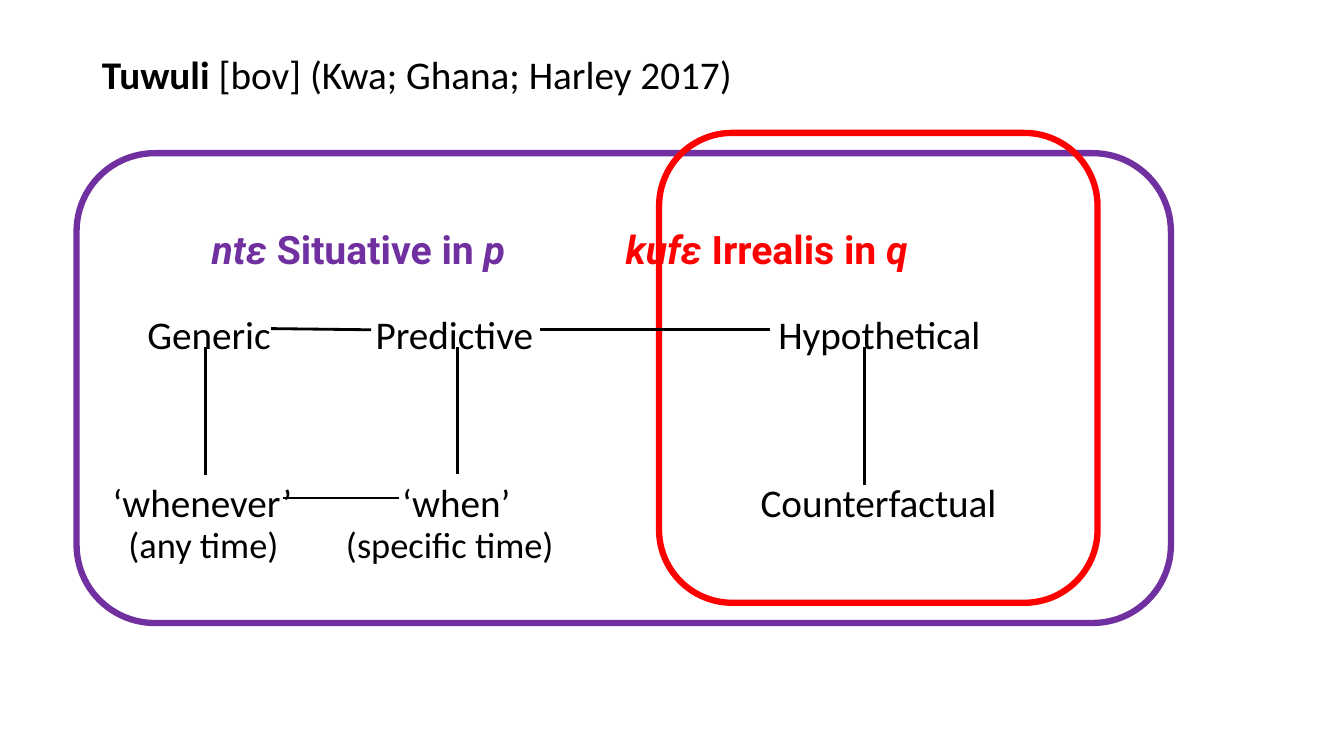
"""Build the slide mapping Tuwuli conditional markers onto clause types."""
from lxml import etree
from pptx import Presentation
from pptx import util as u
from pptx.dml.color import RGBColor
from pptx.enum import shapes, text
from pptx.oxml.ns import qn

COLORS = {"ink": "000000", "situative": "7030A0", "irrealis": "FF0000"}


class SemanticMap:
    """Hold the style and the slide that the map is drawn on."""

    line_width = u.Pt(2)
    frame_width = u.Pt(4.5)
    label_height = 1.3

    def __init__(self, slide):
        """Keep the current slide."""
        self.slide = slide

    def color(self, name):
        """Return a named colour."""
        return RGBColor.from_string(COLORS[name])

    def label(self, runs, left, middle, width, centred=True, color="ink", name="Calibri", size=28):
        """Write one line of (text, format) runs around a middle height."""
        top = middle - self.label_height / 2
        box = self.slide.shapes.add_textbox(
            u.Cm(left), u.Cm(top), u.Cm(width), u.Cm(self.label_height))
        frame_format = {"word_wrap": True, "vertical_anchor": text.MSO_ANCHOR.MIDDLE,
                        "margin_left": 0, "margin_right": 0, "margin_top": 0, "margin_bottom": 0}
        for key, value in frame_format.items():
            setattr(box.text_frame, key, value)
        paragraph = box.text_frame.paragraphs[0]
        paragraph.alignment = text.PP_ALIGN.CENTER if centred else text.PP_ALIGN.LEFT
        for words, run_format in runs:
            run = paragraph.add_run()
            run.text = words
            run.font.color.rgb = self.color(color)
            for key, value in {"name": name, "size": u.Pt(size), **run_format}.items():
                setattr(run.font, key, value)

    def node(self, words, center, middle, size=28):
        """Write a clause type centred on a point."""
        self.label([(words, {})], center - 4, middle, 8, size=size)

    def marker(self, form, meaning, clause, center, color):
        """Write a marker with its meaning and clause in bold."""
        slanted = {"bold": True, "italic": True}
        runs = [(form, slanted), (f" {meaning} in ", {"bold": True}), (clause, slanted)]
        self.label(runs, center - 5, 6.26, 10, color=color, name="Roboto")

    def link(self, start_x, start_y, end_x, end_y):
        """Draw a straight line between two clause types."""
        connector = self.slide.shapes.add_connector(
            shapes.MSO_CONNECTOR.STRAIGHT,
            u.Cm(start_x), u.Cm(start_y), u.Cm(end_x), u.Cm(end_y))
        connector.line.color.rgb = self.color("ink")
        connector.line.width = self.line_width
        etree.SubElement(connector._element.spPr, qn("a:effectLst"))

    def frame(self, left, top, width, height, color):
        """Draw the rounded outline of a marker's range."""
        shape = self.slide.shapes.add_shape(
            shapes.MSO_SHAPE.ROUNDED_RECTANGLE,
            u.Cm(left), u.Cm(top), u.Cm(width), u.Cm(height))
        shape.shadow.inherit = False
        shape.fill.background()
        shape.line.color.rgb = self.color(color)
        shape.line.width = self.frame_width


def main():
    """Draw the map and save the presentation."""
    presentation = Presentation()
    presentation.slide_width = u.Cm(33.87)
    presentation.slide_height = u.Cm(19.05)
    slide = presentation.slides.add_slide(presentation.slide_layouts[6])
    semantic_map = SemanticMap(slide)

    semantic_map.label([("Tuwuli", {"bold": True}), (" [bov] (Kwa; Ghana; Harley 2017)", {})],
                       2.57, 1.86, 28, centred=False)
    semantic_map.marker("ntɛ", "Situative", "p", 9.03, "situative")
    semantic_map.marker("kufɛ", "Irrealis", "q", 19.32, "irrealis")

    rows = [
        (8.41, 28, [("Generic", 5.27), ("Predictive", 11.45), ("Hypothetical", 22.16)]),
        (12.65, 28, [("‘whenever’", 5.1), ("‘when’", 11.5), ("Counterfactual", 22.14)]),
        (13.7, 26, [("(any time)", 5.13), ("(specific time)", 11.34)]),
    ]
    for middle, size, nodes in rows:
        for words, center in nodes:
            semantic_map.node(words, center, middle, size)

    semantic_map.frame(1.93, 3.86, 27.58, 11.84, "situative")
    semantic_map.frame(16.61, 3.35, 11.05, 11.84, "irrealis")

    for x, bottom in [(5.18, 11.96), (11.53, 11.94), (21.79, 12.22)]:
        semantic_map.link(x, 8.75, x, bottom)
    semantic_map.link(9.35, 8.31, 6.83, 8.28)
    semantic_map.link(19.41, 8.31, 13.61, 8.31)
    semantic_map.link(10.06, 12.55, 7.14, 12.55)

    presentation.save("out.pptx")


if __name__ == "__main__":
    main()
